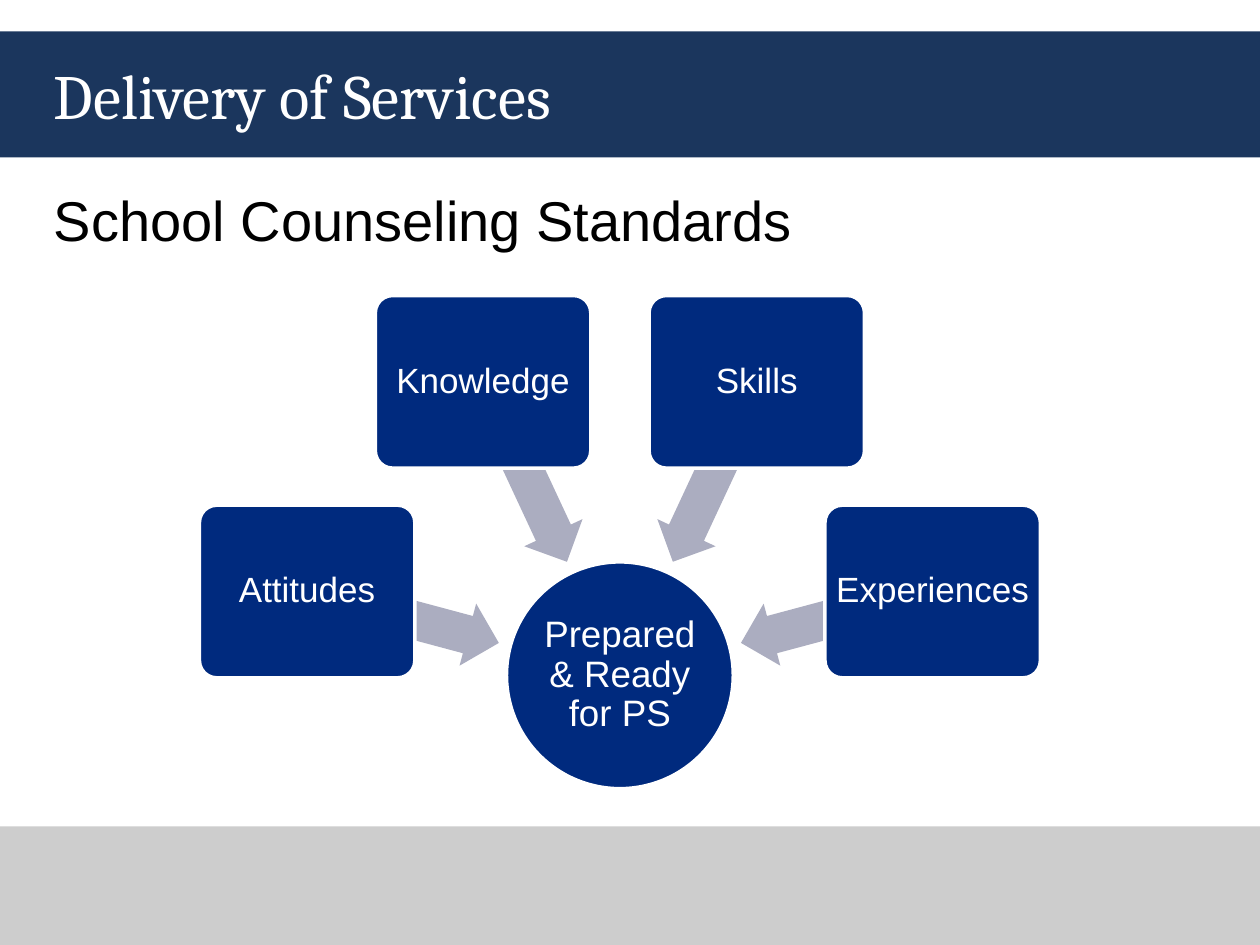
from math import cos, radians, sin

from pptx import Presentation
from pptx.dml.color import RGBColor
from pptx.enum.shapes import MSO_SHAPE
from pptx.enum.text import MSO_ANCHOR, PP_ALIGN
from pptx.util import Inches, Pt

RECT, ROUND = MSO_SHAPE.RECTANGLE, MSO_SHAPE.ROUNDED_RECTANGLE
OVAL, ARROW = MSO_SHAPE.OVAL, MSO_SHAPE.LEFT_ARROW
TOP, MIDDLE = MSO_ANCHOR.TOP, MSO_ANCHOR.MIDDLE
LEFT, CENTER = PP_ALIGN.LEFT, PP_ALIGN.CENTER

WHITE = RGBColor(0xFF, 0xFF, 0xFF)
BLACK = RGBColor(0x00, 0x00, 0x00)
NAVY = RGBColor(0x1B, 0x36, 0x5D)
GRAY = RGBColor(0xCD, 0xCD, 0xCD)
BLUE = RGBColor(0x00, 0x2A, 0x7E)
LAVENDER = RGBColor(0xAB, 0xAD, 0xC0)

BANDS = [((0, 0.25, 10, 1), NAVY), ((0, 6.56, 10, 0.94), GRAY)]
HEADINGS = [
    ("Delivery of Services", (0.33, 0.25, 9.08, 1), MIDDLE,
     {"name": "Cambria", "size": Pt(36)}, WHITE),
    ("School Counseling Standards", (0.33, 1.42, 9.17, 4.95), TOP,
     {"name": "Arial", "size": Pt(32)}, BLACK),
]
GOAL = "Prepared & Ready for PS"
INPUTS = ["Attitudes", "Knowledge", "Skills", "Experiences"]

HUB_X, HUB_Y, HUB_SIZE = 4.92, 5.36, 1.8
BOX_RADIUS, BOX_W, BOX_H = 2.57, 1.71, 1.37
ARROW_RADIUS, ARROW_W, ARROW_H = 1.78, 1.57, 0.51
FIRST_ANGLE, ANGLE_STEP = 195, 50


def write(sp, text, font, color, anchor, align):
    tf = sp.text_frame
    tf.word_wrap = True
    tf.vertical_anchor = anchor
    p = tf.paragraphs[0]
    p.alignment = align
    r = p.add_run()
    r.text = text
    for key, value in font.items():
        setattr(r.font, key, value)
    r.font.color.rgb = color


def add_shape(s, kind, at, fill, outlined=False):
    sp = s.shapes.add_shape(kind, *map(Inches, at))
    sp.shadow.inherit = False
    sp.fill.solid()
    sp.fill.fore_color.rgb = fill
    if outlined:
        sp.line.color.rgb = WHITE
        sp.line.width = Pt(2)
    else:
        sp.line.fill.background()
    return sp


def add_node(s, kind, at, text, size, inset):
    sp = add_shape(s, kind, at, BLUE, outlined=True)
    for side in ("left", "top", "right", "bottom"):
        setattr(sp.text_frame, f"margin_{side}", Inches(inset))
    write(sp, text, {"name": "Arial", "size": Pt(size)}, WHITE, MIDDLE, CENTER)
    sp.text_frame.paragraphs[0].line_spacing = 0.9
    return sp


def around_hub(angle, radius, w, h):
    x = HUB_X + radius * cos(radians(angle))
    y = HUB_Y + radius * sin(radians(angle))
    return x - w / 2, y - h / 2, w, h


def main():
    prs = Presentation()
    prs.slide_width, prs.slide_height = Inches(10), Inches(7.5)
    s = prs.slides.add_slide(prs.slide_layouts[6])

    for at, color in BANDS:
        add_shape(s, RECT, at, color)
    for text, at, anchor, font, color in HEADINGS:
        sp = s.shapes.add_textbox(*map(Inches, at))
        write(sp, text, font, color, anchor, LEFT)

    hub = around_hub(0, 0, HUB_SIZE, HUB_SIZE)
    add_node(s, OVAL, hub, GOAL, 21, 0.01)
    for i, label in enumerate(INPUTS):
        angle = FIRST_ANGLE + i * ANGLE_STEP
        arrow = add_shape(s, ARROW, around_hub(angle, ARROW_RADIUS, ARROW_W, ARROW_H), LAVENDER)
        arrow.adjustments[0] = 0.6
        arrow.adjustments[1] = 0.5
        arrow.rotation = angle
        box = add_node(s, ROUND, around_hub(angle, BOX_RADIUS, BOX_W, BOX_H), label, 20, 0.03)
        box.adjustments[0] = 0.1

    prs.save("out.pptx")


if __name__ == "__main__":
    main()
